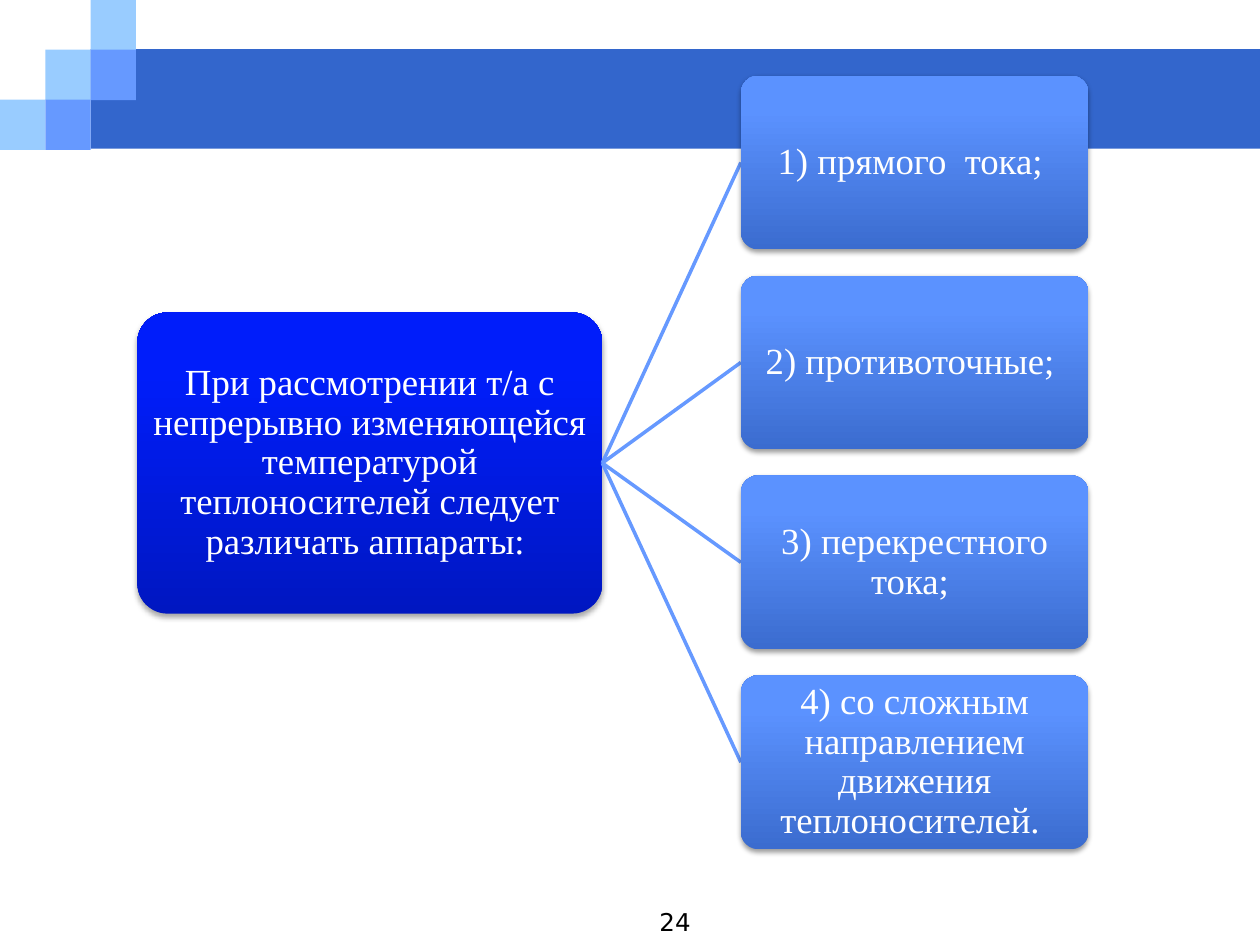
from lxml import etree
from pptx import Presentation, util as u
from pptx.dml import color
from pptx.enum import shapes, text
from pptx.oxml import ns

ROOT = "При рассмотрении т/а с непрерывно изменяющейся температурой теплоносителей следует различать аппараты: "
KINDS = [
    "1) прямого  тока; ",
    "2) противоточные; ",
    "3) перекрестного тока; ",
    "4) со сложным направлением движения теплоносителей. ",
]
PAGE = "24"

THEME = {
    "band": "3366CC", "light": "99CCFF", "mid": "6699FF",
    "root": ("0017C1", "001DFA"), "kind": ("3B6CCF", "5B92FF"),
    "line": "6699FF", "white": "FFFFFF", "black": "000000",
    "serif": "Times New Roman", "sans": "DejaVu Sans",
    "body": 21, "page": 14,
}

# Header tiles sit on a grid: column, row, colour
TILE_W, TILE_H = 0.36, 0.4
TILES = [(0, 2, "light"), (1, 1, "light"), (2, 0, "light"),
         (2, 1, "mid"), (1, 2, "mid")]
BAND = (0.72, 0.39, 9.28, 0.79)
ROOT_BOX = (1.09, 2.48, 3.69, 2.39)
KIND_X, KIND_W, KIND_H = 5.88, 2.76, 1.38
FIRST, LAST = 0.6, 5.36
PAGE_BOX = (3.25, 7.15, 2.33, 0.35)


def rgb(code):
    return color.RGBColor.from_string(code)


def apply(item, **vals):
    for key, val in vals.items():
        setattr(item, key, val)


def place(slide, kind, box):
    shape = slide.shapes.add_shape(kind, *map(u.Inches, box))
    shape.shadow.inherit = False
    shape.line.fill.background()
    return shape


def tile(slide, box, tone):
    shape = place(slide, shapes.MSO_SHAPE.RECTANGLE, box)
    shape.fill.solid()
    shape.fill.fore_color.rgb = rgb(THEME[tone])


def write(frame, words, font, size, tone, align):
    par = frame.paragraphs[0]
    par.alignment = align
    run = par.add_run()
    run.text = words
    apply(run.font, name=THEME[font], size=u.Pt(THEME[size]))
    run.font.color.rgb = rgb(THEME[tone])
    return par


def shade(shape, drop, alpha):
    """Put a soft shadow straight below the shape; alpha in percent."""
    fx = shape._element.spPr.find(ns.qn("a:effectLst"))
    outer = etree.SubElement(fx, ns.qn("a:outerShdw"), blurRad=str(u.Pt(3.1)),
                             dist=str(u.Pt(drop)), dir="5400000", rotWithShape="0")
    tone = etree.SubElement(outer, ns.qn("a:srgbClr"), val=THEME["black"])
    etree.SubElement(tone, ns.qn("a:alpha"), val=str(alpha * 1000))


def card(slide, box, words, tone, drop, alpha):
    shape = place(slide, shapes.MSO_SHAPE.ROUNDED_RECTANGLE, box)
    shape.adjustments[0] = 0.1
    shape.fill.gradient()
    shape.fill.gradient_angle = 90
    for stop, code, pos in zip(shape.fill.gradient_stops, THEME[tone], (0, 0.8)):
        stop.color.rgb = rgb(code)
        stop.position = pos
    shade(shape, drop, alpha)
    frame = shape.text_frame
    pad = u.Inches(0.01)
    apply(frame, word_wrap=True, vertical_anchor=text.MSO_ANCHOR.MIDDLE,
          margin_left=pad, margin_right=pad, margin_top=pad, margin_bottom=pad)
    par = write(frame, words, "serif", "body", "white", text.PP_ALIGN.CENTER)
    par.line_spacing = 0.9


def link(slide, start, end):
    line = slide.shapes.add_connector(shapes.MSO_CONNECTOR.STRAIGHT,
                                      *map(u.Inches, start + end))
    line.line.color.rgb = rgb(THEME["line"])
    line.line.width = u.Pt(2)
    etree.SubElement(line._element.spPr, ns.qn("a:effectLst"))


def main():
    deck = Presentation()
    apply(deck, slide_width=u.Inches(10), slide_height=u.Inches(7.5))
    slide = deck.slides.add_slide(deck.slide_layouts[6])

    tile(slide, BAND, "band")
    for col, row, tone in TILES:
        tile(slide, (col * TILE_W, row * (TILE_H - 0.005), TILE_W, TILE_H), tone)

    card(slide, ROOT_BOX, ROOT, "root", 1.8, 35)
    left, top, wide, high = ROOT_BOX
    hub = (left + wide, top + high / 2)
    step = (LAST - FIRST) / (len(KINDS) - 1)
    for i, words in enumerate(KINDS):
        y = FIRST + i * step
        link(slide, hub, (KIND_X, y + KIND_H / 2))
        card(slide, (KIND_X, y, KIND_W, KIND_H), words, "kind", 1.6, 38)

    page = slide.shapes.add_textbox(*map(u.Inches, PAGE_BOX)).text_frame
    page.word_wrap = True
    write(page, PAGE, "sans", "page", "black", text.PP_ALIGN.RIGHT)

    deck.save("out.pptx")


if __name__ == "__main__":
    main()
